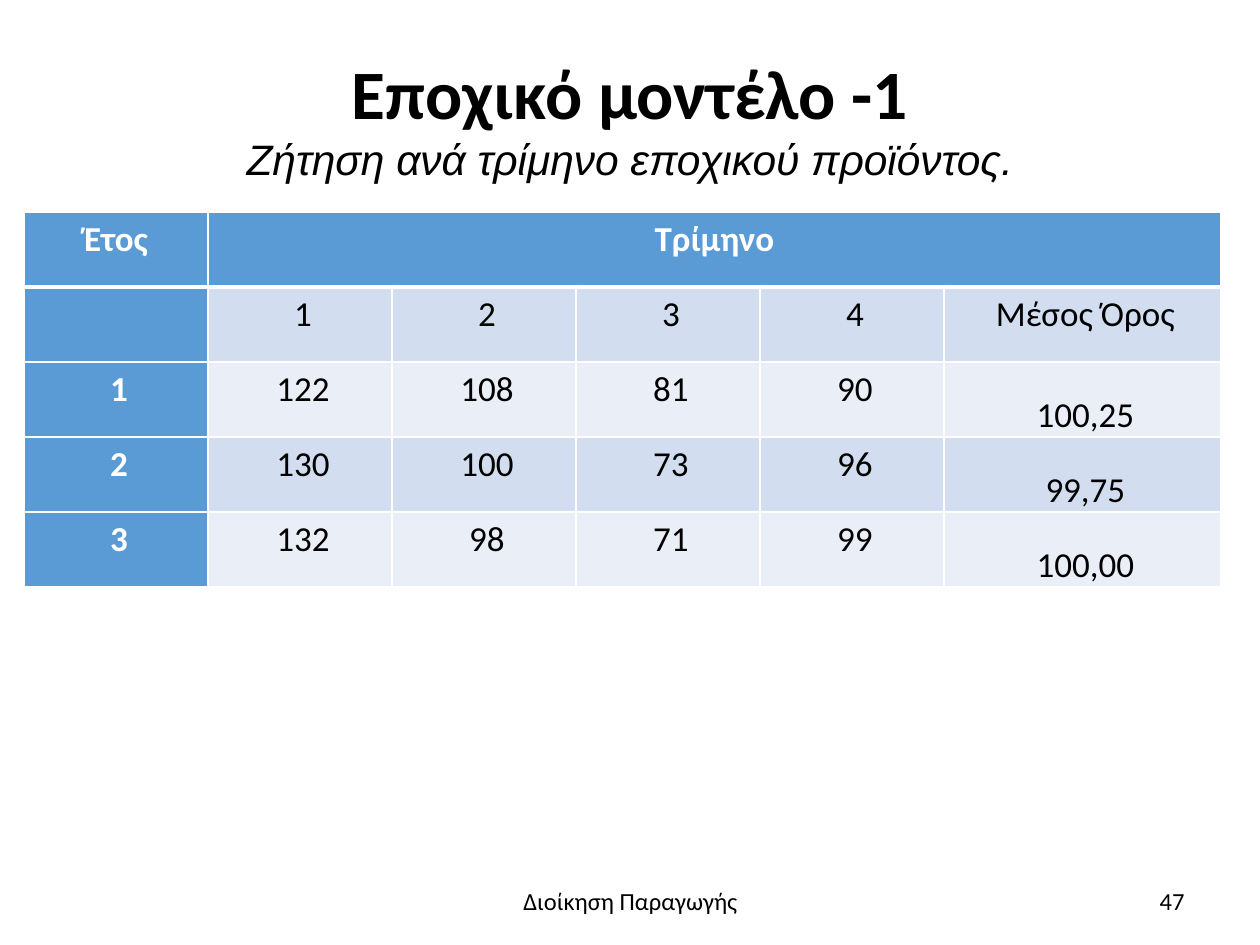
from dataclasses import dataclass

from lxml.etree import SubElement
from pptx import Presentation
from pptx.dml.color import RGBColor
from pptx.enum.text import MSO_ANCHOR, PP_ALIGN
from pptx.oxml.ns import qn
from pptx.util import Emu, Pt

PX = 914400 / 126
COLORS = {
    "black": "000000",
    "white": "FFFFFF",
    "header": "5B9BD5",
    "dark band": "D2DEEF",
    "light band": "EAEFF7",
}
COLUMN_WIDTHS = [184] * 5 + [277]
ROW_HEIGHT = 75
ROWS = [
    ["Έτος", "Τρίμηνο", "", "", "", ""],
    ["", "1", "2", "3", "4", "Μέσος Όρος"],
    ["1", "122", "108", "81", "90", "100,25"],
    ["2", "130", "100", "73", "96", "99,75"],
    ["3", "132", "98", "71", "99", "100,00"],
]


@dataclass(frozen=True)
class TextLine:
    text: str
    size: float
    font: str = "Calibri"
    bold: bool = False
    italic: bool = False


@dataclass(frozen=True)
class TextBox:
    left: int
    top: int
    width: int
    height: int
    align: PP_ALIGN
    lines: tuple[TextLine, ...]


TEXT_BOXES = [
    TextBox(63, 38, 1134, 158, PP_ALIGN.CENTER, (
        TextLine("Εποχικό μοντέλο -1", 39.6, bold=True),
        TextLine("Ζήτηση ανά τρίμηνο εποχικού προϊόντος.", 24.3, "Arial", italic=True),
    )),
    TextBox(431, 876, 399, 50, PP_ALIGN.CENTER, (TextLine("Διοίκηση Παραγωγής", 14),)),
    TextBox(903, 876, 294, 50, PP_ALIGN.RIGHT, (TextLine("47", 14),)),
]


def px(value: int) -> Emu:
    return Emu(round(value * PX))


def rgb(name: str) -> RGBColor:
    return RGBColor.from_string(COLORS[name])


def style_font(font, line: TextLine, color: str) -> None:
    font.name, font.size = line.font, Pt(line.size)
    font.bold, font.italic = line.bold, line.italic
    font.color.rgb = rgb(color)


def add_text_box(slide, box: TextBox) -> None:
    """Draw the lines as one paragraph with line breaks between them."""
    sp = slide.shapes.add_textbox(px(box.left), px(box.top), px(box.width), px(box.height))
    tf = sp.text_frame
    tf.word_wrap = True
    tf.vertical_anchor = MSO_ANCHOR.MIDDLE
    p = tf.paragraphs[0]
    p.alignment = box.align
    for i, line in enumerate(box.lines):
        if i:
            p.add_line_break()
        r = p.add_run()
        r.text = line.text
        style_font(r.font, line, "black")


def set_borders(cell, row: int) -> None:
    """Draw white borders, thick between the header row and the body."""
    widths = {"lnL": 1, "lnR": 1, "lnT": 3 if row == 1 else 1, "lnB": 3 if row == 0 else 1}
    tc_pr = cell._tc.get_or_add_tcPr()
    for tag, width in widths.items():
        ln = SubElement(tc_pr, qn(f"a:{tag}"), w=str(Pt(width)))
        fill = SubElement(ln, qn("a:solidFill"))
        SubElement(fill, qn("a:srgbClr"), val=COLORS["white"])


def fill_cell(cell, row: int, col: int) -> None:
    is_header = row == 0 or col == 0
    set_borders(cell, row)
    cell.fill.solid()
    cell.fill.fore_color.rgb = rgb(
        "header" if is_header else "dark band" if row % 2 else "light band")
    cell.margin_left = cell.margin_right = px(9)
    cell.margin_top = cell.margin_bottom = 0
    if row > 1 and col == len(COLUMN_WIDTHS) - 1:
        cell.vertical_anchor = MSO_ANCHOR.BOTTOM
    text = ROWS[row][col]
    if not text:
        return
    p = cell.text_frame.paragraphs[0]
    p.text = text
    p.alignment = PP_ALIGN.CENTER
    p.line_spacing = 1.15
    if row:
        p._p.get_or_add_pPr().set("marL", str(px(6)))
    style_font(p.font, TextLine(text, 20, bold=is_header),
               "white" if is_header else "black")


def add_demand_table(slide) -> None:
    table = slide.shapes.add_table(
        len(ROWS), len(COLUMN_WIDTHS), px(24), px(212),
        px(sum(COLUMN_WIDTHS)), px(ROW_HEIGHT * len(ROWS))).table
    table.first_col = True
    for column, width in zip(table.columns, COLUMN_WIDTHS):
        column.width = px(width)
    for row, table_row in enumerate(table.rows):
        table_row.height = px(ROW_HEIGHT)
        for col, cell in enumerate(table_row.cells):
            fill_cell(cell, row, col)
    table.cell(0, 1).merge(table.cell(0, len(COLUMN_WIDTHS) - 1))


def main() -> None:
    prs = Presentation()
    prs.slide_width, prs.slide_height = px(1260), px(945)
    slide = prs.slides.add_slide(prs.slide_layouts[6])
    add_demand_table(slide)
    for box in TEXT_BOXES:
        add_text_box(slide, box)
    prs.save("out.pptx")


if __name__ == "__main__":
    main()
